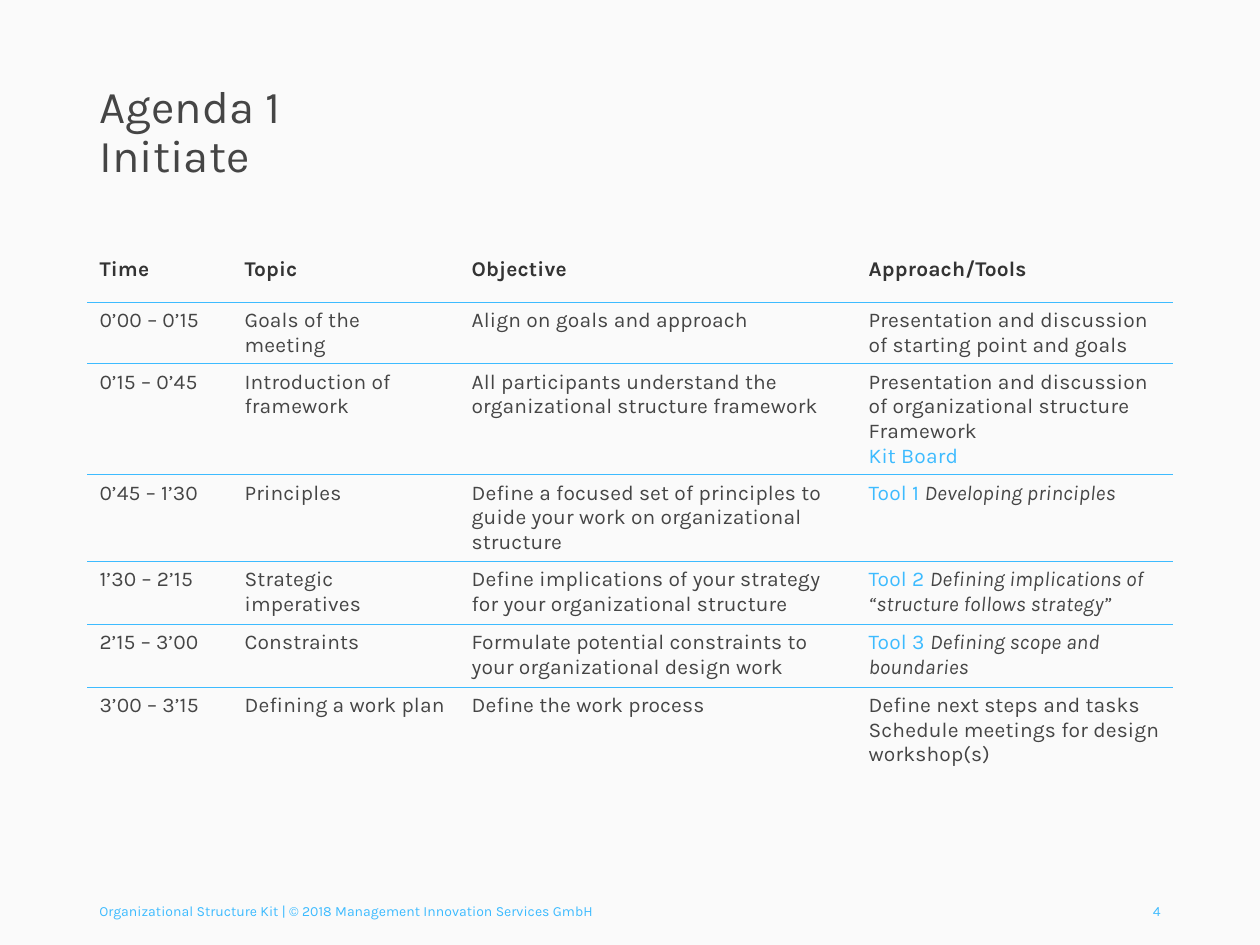
from dataclasses import dataclass

from lxml.etree import SubElement
from pptx import Presentation
from pptx.dml.color import RGBColor as Color
from pptx.enum.text import MSO_ANCHOR as Anchor, PP_ALIGN as Align
from pptx.oxml.ns import qn
from pptx.util import Emu, Pt

PX = 914400 / 126


def px(length):
    return Emu(round(length * PX))


@dataclass(frozen=True)
class Theme:
    font: str = "Karla"
    background: str = "FAFAFA"
    ink: str = "454545"
    heading: str = "333333"
    accent: str = "3DBBFF"
    title_size: float = 26
    table_size: float = 12
    footer_size: float = 8
    rule_width: float = 0.5
    tracking: int = 10


class SlideBuilder:
    def __init__(self, deck, theme):
        self.theme = theme
        self.page = deck.slides.add_slide(deck.slide_layouts[5])
        fill = self.page.background.fill
        fill.solid()
        fill.fore_color.rgb = Color.from_string(theme.background)

    def style(self, span, size, color, bold=False, italic=False):
        font = span.font
        font.name = self.theme.font
        font.size = Pt(size)
        font.bold = bold
        font.italic = italic
        font.color.rgb = Color.from_string(color)

    def place(self, shape, left, top, width, height):
        shape.left, shape.top = px(left), px(top)
        shape.width, shape.height = px(width), px(height)

    def title(self, text, *bounds):
        box = self.page.shapes.title
        self.place(box, *bounds)
        frame = box.text_frame
        frame.word_wrap = True
        frame.vertical_anchor = Anchor.TOP
        frame.text = text
        para = frame.paragraphs[0]
        para.alignment = Align.LEFT
        para.line_spacing = 0.9
        para.font.size = Pt(self.theme.title_size)
        for span in para.runs:
            self.style(span, self.theme.title_size, self.theme.ink)

    def footer(self, text, align, *bounds):
        box = self.page.shapes.add_textbox(*map(px, bounds))
        frame = box.text_frame
        frame.word_wrap = True
        frame.vertical_anchor = Anchor.BOTTOM
        frame.text = text
        para = frame.paragraphs[0]
        para.alignment = align
        self.style(para.runs[0], self.theme.footer_size, self.theme.accent)

    def borders(self, cell, ruled_sides):
        properties = cell._tc.get_or_add_tcPr()
        for side in "LRTB":
            line = SubElement(properties, qn(f"a:ln{side}"))
            if side in ruled_sides:
                line.set("w", str(Pt(self.theme.rule_width)))
                fill = SubElement(line, qn("a:solidFill"))
                SubElement(fill, qn("a:srgbClr")).set("val", self.theme.accent)
            else:
                line.set("w", "0")
                SubElement(line, qn("a:noFill"))

    def cell_text(self, cell, paragraphs, header):
        theme = self.theme
        frame = cell.text_frame
        for index, parts in enumerate(paragraphs):
            para = frame.add_paragraph() if index else frame.paragraphs[0]
            for text, kind in parts:
                span = para.add_run()
                span.text = text
                color = theme.accent if kind == "tool" else theme.ink
                self.style(span, theme.table_size,
                           theme.heading if header else color,
                           bold=header, italic=kind == "name")
                span.font._element.set("spc", str(theme.tracking))

    def table(self, rows, widths, heights, left, top):
        shape = self.page.shapes.add_table(
            len(rows), len(widths), px(left), px(top),
            px(sum(widths)), px(sum(heights)))
        table = shape.table
        table.first_row = False
        table.horz_banding = False
        for column, width in zip(table.columns, widths):
            column.width = px(width)
        for row, height in zip(table.rows, heights):
            row.height = px(height)
        last = len(rows) - 1
        for r, row in enumerate(rows):
            sides = "B" if r == 0 else "T" if r == last else "TB"
            for c, content in enumerate(row):
                cell = table.cell(r, c)
                cell.vertical_anchor = Anchor.TOP
                self.borders(cell, sides)
                cell.fill.background()
                if isinstance(content, str):
                    content = [[(content, "plain")]]
                self.cell_text(cell, content, header=r == 0)


def tool(number, name):
    return [[(f"Tool {number} ", "tool"), (name, "name")]]


AGENDA = [
    ("Time", "Topic", "Objective", "Approach/Tools"),
    ("0’00 – 0’15", "Goals of the meeting", "Align on goals and approach",
     "Presentation and discussion of starting point and goals"),
    ("0’15 – 0’45", "Introduction of framework",
     "All participants understand the organizational structure framework",
     [[("Presentation and discussion of organizational structure", "plain")],
      [("Framework", "plain")],
      [("Kit Board", "tool")]]),
    ("0’45 – 1’30", "Principles",
     "Define a focused set of principles to guide your work on "
     "organizational structure",
     tool(1, "Developing principles")),
    ("1’30 – 2’15", "Strategic imperatives",
     "Define implications of your strategy for your organizational structure",
     tool(2, "Defining implications of “structure follows strategy”")),
    ("2’15 – 3’00", "Constraints",
     "Formulate potential constraints to your organizational design work",
     tool(3, "Defining scope and boundaries")),
    ("3’00 – 3’15", "Defining a work plan", "Define the work process",
     "Define next steps and tasks Schedule meetings for design workshop(s)"),
]


def main():
    deck = Presentation()
    deck.slide_width, deck.slide_height = px(1260), px(945)
    slide = SlideBuilder(deck, Theme())
    slide.title("Agenda 1\vInitiate", 87, 78, 1086, 155)
    slide.table(AGENDA, [145, 227, 397, 317], [51, 51] + [63] * 5, 87, 251)
    slide.footer("Organizational Structure Kit | © 2018 Management Innovation "
                 "Services GmbH", Align.LEFT, 87, 876, 798, 50)
    slide.footer("4", Align.RIGHT, 890, 876, 283, 50)
    deck.save("out.pptx")


if __name__ == "__main__":
    main()
